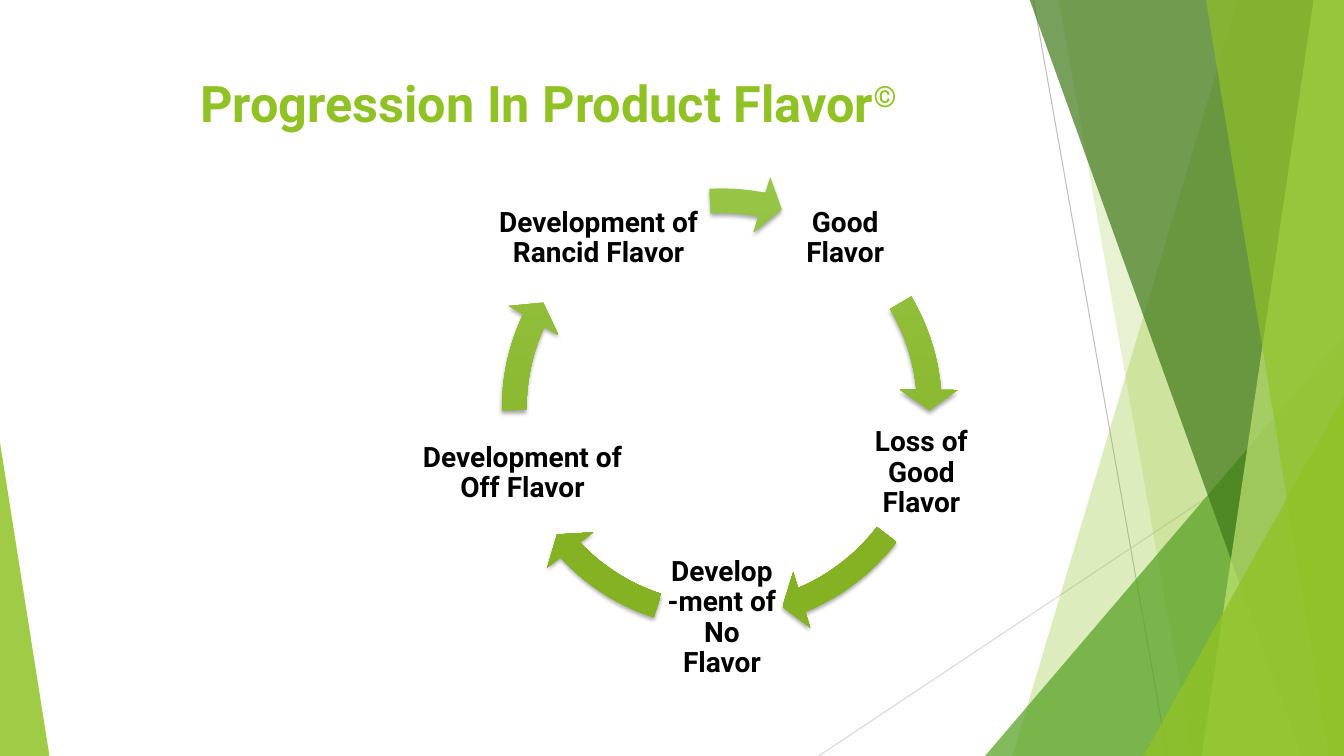
from dataclasses import dataclass
from math import cos, radians, sin

from lxml.etree import SubElement
from pptx import Presentation
from pptx.dml.color import RGBColor
from pptx.enum.shapes import MSO_CONNECTOR, MSO_SHAPE
from pptx.enum.text import MSO_ANCHOR, PP_ALIGN
from pptx.oxml.ns import qn
from pptx.util import Inches, Pt


@dataclass(frozen=True)
class Theme:
    font: str = "Roboto"
    lime: str = "90C226"
    green: str = "54A021"
    forest: str = "3F7819"
    pale: str = "C0E474"
    arrow_top: str = "97C547"
    arrow_bottom: str = "84B223"
    text: str = "000000"
    shadow: str = "000000"
    dark_line: str = "BFBFBF"
    light_line: str = "D9D9D9"
    title_size: int = 36
    label_size: int = 20
    line_width: float = 0.75


THEME = Theme()
WIDTH, HEIGHT, TOP = 13.33, 7.5, -0.01
CENTER_X, CENTER_Y = 7.16, 4.05
LABEL_RADIUS, LABEL_HEIGHT, RING_SIZE = 2.08, 1.25, 4.69

STAGES = [
    ("Good Flavor", 1.25, 329.43, 354.9),
    ("Loss of Good Flavor", 1.25, 37.46, 67.4),
    ("Develop -ment of No Flavor", 1.25, 108.07, 136.95),
    ("Development of Off Flavor", 2.09, 179.51, 204.98),
    ("Development of Rancid Flavor", 2.21, 266.71, 281.11),
]


def color(value):
    return RGBColor.from_string(value)


def add_line(shapes, start, end, line_color):
    line = shapes.add_connector(MSO_CONNECTOR.STRAIGHT, *map(Inches, start + end))
    line.line.color.rgb = color(line_color)
    line.line.width = Pt(THEME.line_width)
    SubElement(line._element.spPr, qn("a:effectLst"))


def paint(shape, fill_color, opacity):
    shape.shadow.inherit = False
    shape.line.fill.background()
    shape.fill.solid()
    shape.fill.fore_color.rgb = color(fill_color)
    rgb = shape._element.spPr.find(qn("a:solidFill"))[0]
    SubElement(rgb, qn("a:alpha"), val=str(opacity * 1000))


def add_band(shapes, top_left, bottom_left, fill_color, opacity):
    builder = shapes.build_freeform(Inches(top_left), Inches(TOP))
    corners = [(WIDTH, TOP), (WIDTH, HEIGHT), (bottom_left, HEIGHT)]
    builder.add_line_segments([(Inches(x), Inches(y)) for x, y in corners])
    paint(builder.convert_to_shape(), fill_color, opacity)


def add_triangle(shapes, left, top, width, apex, fill_color, opacity):
    box = map(Inches, (left, top, width, HEIGHT - top))
    triangle = shapes.add_shape(MSO_SHAPE.ISOSCELES_TRIANGLE, *box)
    triangle.adjustments[0] = apex
    paint(triangle, fill_color, opacity)


def add_text(shapes, box, text, size, text_color):
    text_box = shapes.add_textbox(*map(Inches, box))
    frame = text_box.text_frame
    frame.word_wrap = True
    paragraph = frame.paragraphs[0]
    paragraph.alignment = PP_ALIGN.CENTER
    paragraph.font.name = THEME.font
    paragraph.font.size = Pt(size)
    paragraph.font.bold = True
    paragraph.font.color.rgb = color(text_color)
    paragraph.add_run().text = text
    return frame


def add_title(slide):
    frame = add_text(slide.shapes, (0.74, 0.67, 9.4, 1.44),
                     "Progression In Product Flavor", THEME.title_size, THEME.lime)
    mark = frame.paragraphs[0].add_run()
    mark.text = "©"
    mark.font._element.set("baseline", "30000")


def add_label(shapes, text, width, angle):
    left = CENTER_X + LABEL_RADIUS * cos(radians(angle)) - width / 2
    top = CENTER_Y + LABEL_RADIUS * sin(radians(angle)) - LABEL_HEIGHT / 2
    frame = add_text(shapes, (left, top, width, LABEL_HEIGHT), text,
                     THEME.label_size, THEME.text)
    frame.vertical_anchor = MSO_ANCHOR.MIDDLE
    frame.margin_left = frame.margin_right = Inches(0.03)
    frame.margin_top = frame.margin_bottom = Inches(0.03)
    frame.paragraphs[0].line_spacing = 0.9
    frame.paragraphs[0].space_after = Pt(THEME.label_size * 0.35)


def add_shadow(shape):
    shape.shadow.inherit = False
    effects = shape._element.spPr.find(qn("a:effectLst"))
    shadow = SubElement(effects, qn("a:outerShdw"), blurRad=str(Pt(3)),
                        dist=str(Pt(2)), dir="5400000", rotWithShape="0")
    rgb = SubElement(shadow, qn("a:srgbClr"), val=THEME.shadow)
    SubElement(rgb, qn("a:alpha"), val="35000")


def add_arc_arrow(shapes, start_angle, end_angle):
    box = (CENTER_X - RING_SIZE / 2, CENTER_Y - RING_SIZE / 2, RING_SIZE, RING_SIZE)
    arrow = shapes.add_shape(MSO_SHAPE.CIRCULAR_ARROW, *map(Inches, box))
    values = (0.052, 3.36, end_angle * 0.6, start_angle * 0.6, 0.061)
    for index, value in enumerate(values):
        arrow.adjustments[index] = value
    arrow.line.fill.background()
    arrow.fill.gradient()
    arrow.fill.gradient_angle = 270
    stops = ((0, THEME.arrow_top), (0.78, THEME.arrow_bottom))
    for stop, (position, stop_color) in zip(arrow.fill.gradient_stops, stops):
        stop.position = position
        stop.color.rgb = color(stop_color)
    add_shadow(arrow)


def add_backdrop(slide):
    shapes = slide.shapes.add_group_shape().shapes
    add_line(shapes, (10.25, 0), (11.58, HEIGHT), THEME.dark_line)
    add_line(shapes, (WIDTH, 4.03), (8.12, HEIGHT), THEME.light_line)
    add_band(shapes, 12.28, 10.04, THEME.lime, 30)
    add_band(shapes, 10.5, 11.83, THEME.lime, 20)
    add_triangle(shapes, 9.77, 3.33, 3.56, 1, THEME.green, 72)
    add_band(shapes, 10.21, 12.91, THEME.forest, 70)
    add_band(shapes, 13.03, 11.92, THEME.pale, 70)
    add_band(shapes, 11.96, 13.18, THEME.lime, 65)
    add_triangle(shapes, 11.34, 3.93, 1.99, 1, THEME.lime, 80)
    add_triangle(shapes, 0, 4.39, 0.49, 0, THEME.lime, 85)


def add_flavor_cycle(slide):
    shapes = slide.shapes.add_group_shape().shapes
    step = 360 / len(STAGES)
    for index, (text, width, start_angle, end_angle) in enumerate(STAGES):
        add_label(shapes, text, width, index * step - 54)
        add_arc_arrow(shapes, start_angle, end_angle)


def main():
    presentation = Presentation()
    presentation.slide_width = Inches(WIDTH)
    presentation.slide_height = Inches(HEIGHT)
    slide = presentation.slides.add_slide(presentation.slide_layouts[6])
    add_backdrop(slide)
    add_title(slide)
    add_flavor_cycle(slide)
    presentation.save("out.pptx")


if __name__ == "__main__":
    main()
